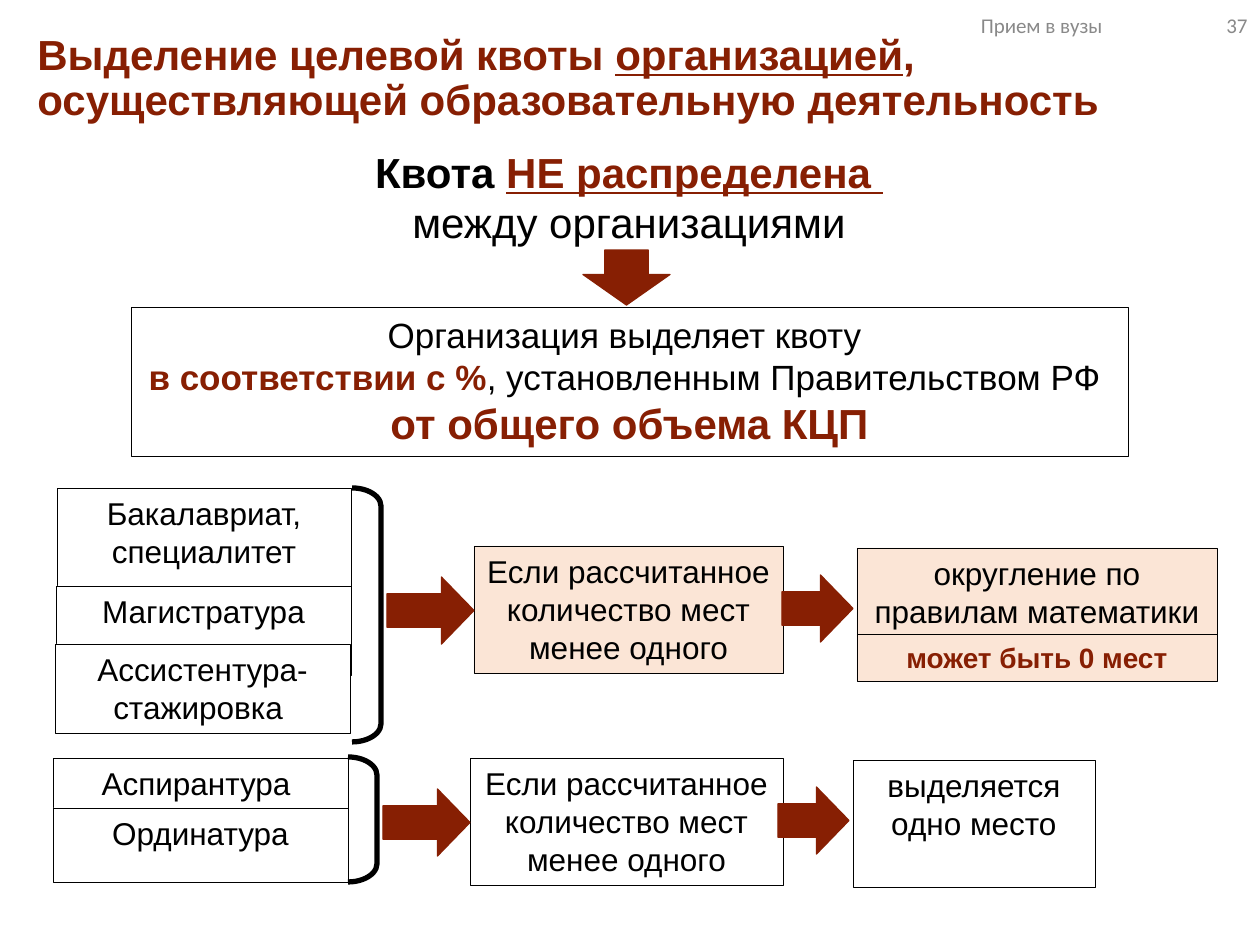
import pptx
import pptx.util
import pptx.dml.color
import pptx.enum.shapes
import pptx.enum.text

PX = 914400 / 126
SHAPES = pptx.enum.shapes.MSO_SHAPE
ALIGN = pptx.enum.text.PP_ALIGN
ANCHOR = pptx.enum.text.MSO_ANCHOR

MAROON, BLACK, WHITE, PEACH, GREY = "871F03", "000000", "FFFFFF", "FBE5D6", "898989"
ACCENT = dict(color=MAROON, bold=True)

# Paragraphs are lists of (text, format) runs.
TITLE = [[("Выделение целевой квоты ", {}),
          ("организацией", dict(underline=True)),
          (", осуществляющей образовательную деятельность", {})]]
HEADER = [("Прием в вузы", (888, 0, 227, 50)), ("37", (1134, 0, 126, 50))]

QUOTA = [[("Квота ", dict(bold=True)),
          ("НЕ распределена ", dict(ACCENT, underline=True))],
         [("между организациями", {})]]
RULE = [[("Организация выделяет квоту ", {})],
        [("в соответствии с %", ACCENT),
         (", установленным Правительством РФ ", {})],
        [("от общего объема КЦП", dict(ACCENT, size=24))]]

CONDITION = "Если рассчитанное количество мест менее одного"
# text, (left, top, width, height) in px, fill, format
BOXES = [
    (CONDITION, (474, 546, 309, 127), PEACH, {}),
    ("округление по правилам математики", (857, 548, 360, 89), PEACH, {}),
    ("может быть 0 мест", (857, 634, 360, 47), PEACH, dict(ACCENT, size=16)),
    ("Бакалавриат, специалитет", (57, 488, 294, 127), WHITE, {}),
    ("Магистратура", (56, 586, 295, 89), WHITE, {}),
    ("Ассистентура-стажировка ", (55, 644, 295, 89), WHITE, {}),
    ("Аспирантура ", (53, 758, 295, 50), WHITE, {}),
    ("Ординатура", (53, 808, 295, 74), WHITE, {}),
    (CONDITION, (470, 758, 313, 127), WHITE, {}),
    ("выделяется одно место", (853, 760, 242, 127), WHITE, {}),
]
BRACKETS = [(352, 488, 29, 254), (348, 757, 29, 125)]
# (left, top, width, height), head length, rotation
ARROWS = [
    ((387, 577, 87, 67), 0.485, 0),
    ((782, 575, 71, 67), 0.485, 0),
    ((383, 789, 87, 67), 0.485, 0),
    ((778, 787, 71, 67), 0.485, 0),
    ((599, 234, 55, 87), 0.555, 90),
]


def emu(box):
    return [round(length * PX) for length in box]


def rgb(hex_color):
    return pptx.dml.color.RGBColor.from_string(hex_color)


def write(shape, paragraphs, size=18, color=BLACK, bold=False, font="Arial",
          align=ALIGN.CENTER, anchor=ANCHOR.TOP, spacing=None):
    """Fill a shape with paragraphs; a run's own format overrides the defaults."""
    frame = shape.text_frame
    frame.word_wrap = True
    frame.vertical_anchor = anchor
    for index, runs in enumerate(paragraphs):
        paragraph = frame.add_paragraph() if index else frame.paragraphs[0]
        paragraph.alignment = align
        paragraph.line_spacing = spacing
        for text, style in runs:
            run = paragraph.add_run()
            run.text = text
            run.font.name = font
            run.font.size = pptx.util.Pt(style.get("size", size))
            run.font.bold = style.get("bold", bold)
            run.font.underline = style.get("underline", False)
            run.font.color.rgb = rgb(style.get("color", color))


def add_shape(slide, kind, box, fill=None, line=None, line_width=0.25):
    shape = slide.shapes.add_shape(kind, *emu(box))
    shape.shadow.inherit = False
    if fill:
        shape.fill.solid()
        shape.fill.fore_color.rgb = rgb(fill)
    else:
        shape.fill.background()
    if line:
        shape.line.color.rgb = rgb(line)
        shape.line.width = pptx.util.Pt(line_width)
    else:
        shape.line.fill.background()
    return shape


def main():
    deck = pptx.Presentation()
    deck.slide_width, deck.slide_height = emu((1260, 945))
    slide = deck.slides.add_slide(deck.slide_layouts[6])

    title = slide.shapes.add_textbox(*emu((25, 28, 1235, 59)))
    write(title, TITLE, size=24, color=MAROON, bold=True,
          align=ALIGN.LEFT, spacing=0.9)
    for text, box in HEADER:
        write(slide.shapes.add_textbox(*emu(box)), [[(text, {})]], size=12,
              color=GREY, font="Calibri", align=ALIGN.RIGHT, anchor=ANCHOR.MIDDLE)

    for text, box, fill, style in BOXES:
        write(add_shape(slide, SHAPES.RECTANGLE, box, fill, BLACK), [[(text, style)]])
    quota = add_shape(slide, SHAPES.RECTANGLE, (294, 140, 670, 115), WHITE)
    write(quota, QUOTA, size=24)
    rule = add_shape(slide, SHAPES.RECTANGLE, (131, 307, 997, 149), WHITE, BLACK)
    write(rule, RULE, size=20)

    for box in BRACKETS:
        bracket = add_shape(slide, SHAPES.RIGHT_BRACKET, box, line=BLACK, line_width=3)
        bracket.adjustments[0] = 0.63
    for box, head, rotation in ARROWS:
        arrow = add_shape(slide, SHAPES.RIGHT_ARROW, box, MAROON, MAROON, 0.75)
        arrow.adjustments[1] = head
        arrow.rotation = rotation

    deck.save("out.pptx")


if __name__ == "__main__":
    main()
